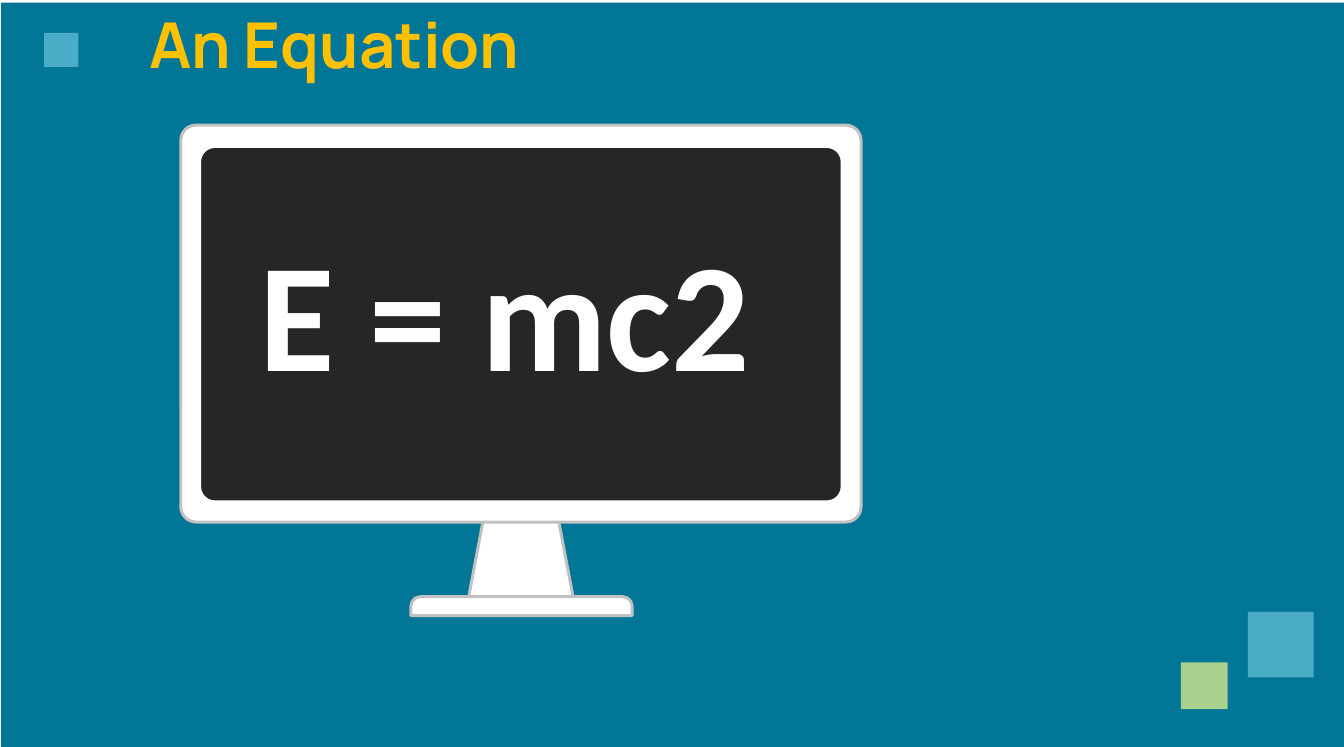
from pptx import Presentation
from pptx.dml.color import RGBColor
from pptx.enum.shapes import MSO_SHAPE
from pptx.enum.text import MSO_ANCHOR, PP_ALIGN
from pptx.util import Inches, Pt

COLORS = {
    "teal": "027696",
    "sky": "4BACC6",
    "green": "A9D18E",
    "gold": "FFC000",
    "white": "FFFFFF",
    "silver": "C1C1C1",
    "screen": "262626",
}


def color(name):
    return RGBColor.from_string(COLORS[name])


def add_block(page, kind, left, top, width, height, fill, line=None,
              line_width=1.7, adjustments=()):
    block = page.shapes.add_shape(
        kind, Inches(left), Inches(top), Inches(width), Inches(height))
    block.shadow.inherit = False
    block.fill.solid()
    block.fill.fore_color.rgb = color(fill)
    if line:
        block.line.color.rgb = color(line)
        block.line.width = Pt(line_width)
    else:
        block.line.fill.background()
    for index, value in enumerate(adjustments):
        block.adjustments[index] = value
    return block


def add_square(page, left, top, side, fill):
    return add_block(page, MSO_SHAPE.RECTANGLE, left, top, side, side, fill)


def add_text(page, text, left, top, width, height, *, size, font, fill,
             align=PP_ALIGN.LEFT, line_spacing=1.0, inset=0.04):
    box = page.shapes.add_textbox(
        Inches(left), Inches(top), Inches(width), Inches(height))
    frame = box.text_frame
    frame.word_wrap = True
    frame.vertical_anchor = MSO_ANCHOR.TOP
    frame.margin_left = frame.margin_right = Inches(0.08)
    frame.margin_top = frame.margin_bottom = Inches(inset)
    para = frame.paragraphs[0]
    para.alignment = align
    para.line_spacing = line_spacing
    span = para.add_run()
    span.text = text
    span.font.size = Pt(size)
    span.font.name = font
    span.font.bold = True
    span.font.color.rgb = color(fill)
    return box


def add_monitor(page):
    corner = 0.12
    add_block(page, MSO_SHAPE.TRAPEZOID, 3.7, 3.98, 0.84, 0.78,
              "white", "silver", adjustments=[0.19])
    add_block(page, MSO_SHAPE.ROUND_2_SAME_RECTANGLE, 3.25, 4.72, 1.75, 0.15,
              "white", "silver", 1.63, adjustments=[0.5, 0])
    add_block(page, MSO_SHAPE.ROUNDED_RECTANGLE, 1.43, 0.99, 5.38, 3.14,
              "white", "silver", adjustments=[corner / 3.14])
    add_block(page, MSO_SHAPE.ROUNDED_RECTANGLE, 1.58, 1.16, 5.08, 2.81,
              "screen", "white", 1.52, adjustments=[corner / 2.81])


def main():
    deck = Presentation()
    deck.slide_width = Inches(10.63)
    deck.slide_height = Inches(5.91)
    page = deck.slides.add_slide(deck.slide_layouts[6])

    add_block(page, MSO_SHAPE.RECTANGLE, 0.01, 0.02, 10.62, 5.89, "teal")
    add_monitor(page)
    add_square(page, 0.35, 0.26, 0.27, "sky")
    add_text(page, "An Equation", -0.41, 0.07, 6.11, 0.77, size=36,
             font="Manrope", fill="gold", align=PP_ALIGN.CENTER,
             line_spacing=0.9)
    add_text(page, "E = mc2", 1.97, 1.68, 4.22, 1.58, size=88,
             font="Calibri", fill="white")
    add_square(page, 9.34, 5.24, 0.37, "green")
    add_square(page, 9.87, 4.84, 0.52, "sky")

    deck.save("out.pptx")


if __name__ == "__main__":
    main()
